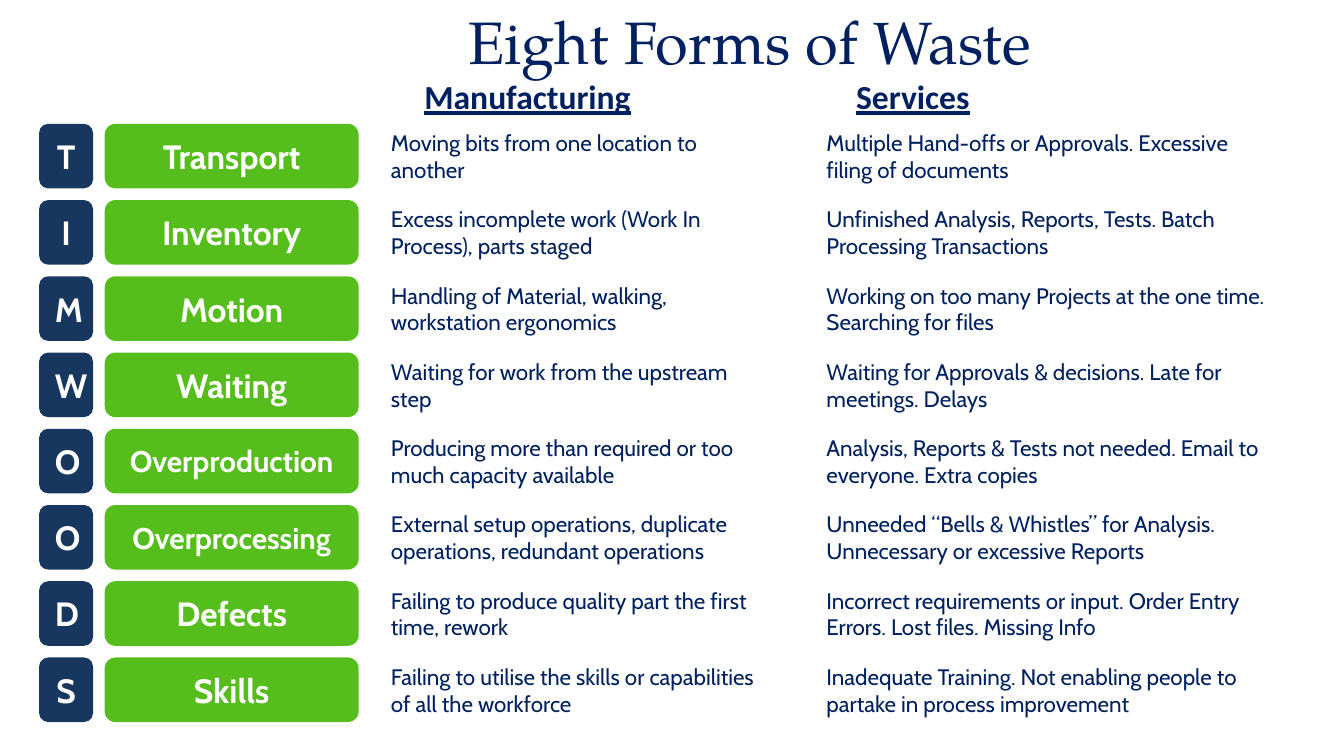
from dataclasses import dataclass

from pptx import Presentation
from pptx.dml.color import RGBColor
from pptx.enum.shapes import MSO_SHAPE
from pptx.enum.text import MSO_ANCHOR, PP_ALIGN
from pptx.util import Cm, Pt

ROUND = MSO_SHAPE.ROUNDED_RECTANGLE
MIDDLE, TOP = MSO_ANCHOR.MIDDLE, MSO_ANCHOR.TOP
LEFT, CENTER = PP_ALIGN.LEFT, PP_ALIGN.CENTER


@dataclass(frozen=True)
class Theme:
    navy: RGBColor = RGBColor(0x00, 0x20, 0x60)
    slate: RGBColor = RGBColor(0x17, 0x37, 0x5E)
    green: RGBColor = RGBColor(0x56, 0xBE, 0x1C)
    white: RGBColor = RGBColor(0xFF, 0xFF, 0xFF)
    serif: str = "TeX Gyre Pagella"
    head: str = "Calibri"
    body: str = "Cabin"
    title: int = 32
    label: int = 18
    long: int = 16
    note: int = 12


theme = Theme()
deck = Presentation()
deck.slide_width, deck.slide_height = Cm(25.4), Cm(14.28)
slide = deck.slides.add_slide(deck.slide_layouts[6])


def write(text, left, top, width, height, fill=None, font=theme.body,
          size=theme.note, color=theme.navy, bold=False, under=False,
          align=LEFT, anchor=MIDDLE, inset=(0.25, 0.13)):
    """Place text in a plain box, or in a rounded tile when a fill is given."""
    place = Cm(left), Cm(top), Cm(width), Cm(height)
    if fill is None:
        box = slide.shapes.add_textbox(*place)
    else:
        box = slide.shapes.add_shape(ROUND, *place)
        box.shadow.inherit = False
        box.fill.solid()
        box.fill.fore_color.rgb = fill
        box.line.fill.background()
    frame = box.text_frame
    frame.word_wrap = True
    frame.vertical_anchor = anchor
    frame.margin_left = frame.margin_right = Cm(inset[0])
    frame.margin_top = frame.margin_bottom = Cm(inset[1])
    para = frame.paragraphs[0]
    para.alignment = align
    run = para.add_run()
    run.text = text
    run.font.name = font
    run.font.size = Pt(size)
    run.font.color.rgb = color
    run.font.bold = bold
    run.font.underline = under


write("Eight Forms of Waste", 2.74, -0.43, 22.86, 2.39,
      font=theme.serif, size=theme.title, align=CENTER)

for text, left in (("Manufacturing", 7.77), ("Services", 15.93)):
    write(text, left, 1.3, 6.65, 1.02, font=theme.head, size=theme.label,
          bold=True, under=True, anchor=TOP)

wastes = [
    ("Transport", "Moving bits from one location to another",
     "Multiple Hand-offs or Approvals. Excessive filing of documents"),
    ("Inventory", "Excess incomplete work (Work In Process), parts staged",
     "Unfinished Analysis, Reports, Tests. Batch Processing Transactions"),
    ("Motion", "Handling of Material, walking, workstation ergonomics",
     "Working on too many Projects at the one time. Searching for files"),
    ("Waiting", "Waiting for work from the upstream step",
     "Waiting for Approvals & decisions. Late for meetings. Delays"),
    ("Overproduction",
     "Producing more than required or too much capacity available",
     "Analysis, Reports & Tests not needed. Email to everyone. Extra copies"),
    ("Overprocessing",
     "External setup operations, duplicate operations, redundant operations",
     "Unneeded “Bells & Whistles” for Analysis. "
     "Unnecessary or excessive Reports"),
    ("Defects", "Failing to produce quality part the first time, rework",
     "Incorrect requirements or input. Order Entry Errors. "
     "Lost files. Missing Info"),
    ("Skills",
     "Failing to utilise the skills or capabilities of all the workforce",
     "Inadequate Training. Not enabling people to "
     "partake in process improvement"),
]
first, pitch, high = 2.34, 1.44, 1.22
tile = dict(color=theme.white, bold=True, align=CENTER)

for row, (name, making, service) in enumerate(wastes):
    top = first + row * pitch
    size = theme.long if len(name) > 10 else theme.label
    write(name[0], 0.74, top, 1.02, high, fill=theme.slate,
          size=theme.label, **tile)
    write(name, 1.98, top, 4.8, high, fill=theme.green, size=size, **tile)
    write(making, 7.19, top, 7.62, high, inset=(0.2, 0.1))
    write(service, 15.42, top, 8.71, high, inset=(0.2, 0.1))

deck.save("out.pptx")
